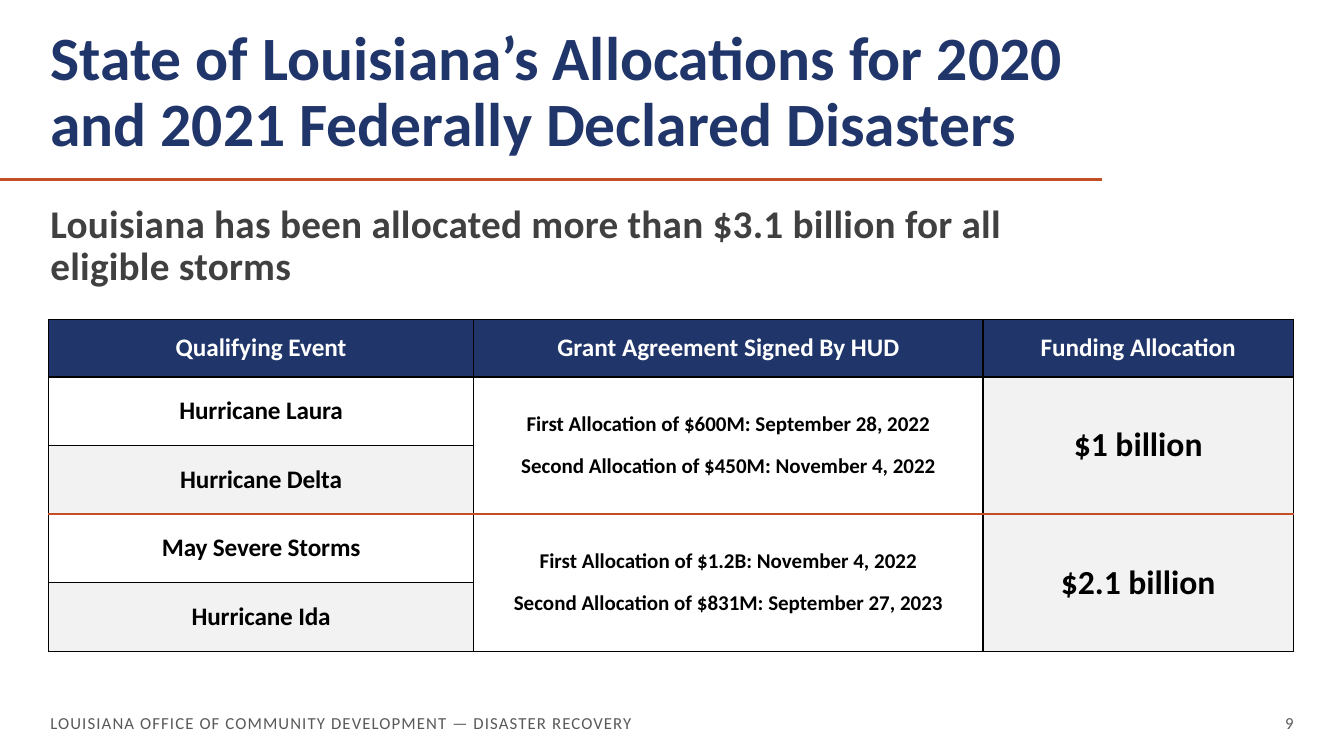
"""Build the slide on Louisiana's disaster funding allocations."""
import pptx
import pptx.dml.color
import pptx.enum.shapes
import pptx.enum.text
import pptx.oxml
import pptx.oxml.ns
import pptx.util

RGBColor = pptx.dml.color.RGBColor
Align = pptx.enum.text.PP_ALIGN
Anchor = pptx.enum.text.MSO_ANCHOR

NAVY = RGBColor(0x20, 0x35, 0x69)
RUST = RGBColor(0xC4, 0x4F, 0x27)
CHARCOAL = RGBColor(0x40, 0x40, 0x40)
GREY = RGBColor(0x59, 0x59, 0x59)
PALE = RGBColor(0xF2, 0xF2, 0xF2)
BLACK = RGBColor(0, 0, 0)
WHITE = RGBColor(0xFF, 0xFF, 0xFF)

HEADINGS = ["Qualifying Event", "Grant Agreement Signed By HUD", "Funding Allocation"]
GROUPS = [
    (
        ["Hurricane Laura", "Hurricane Delta"],
        [
            "First Allocation of $600M: September 28, 2022",
            "Second Allocation of $450M: November 4, 2022",
        ],
        "$1 billion",
    ),
    (
        ["May Severe Storms", "Hurricane Ida"],
        [
            "First Allocation of $1.2B: November 4, 2022",
            "Second Allocation of $831M: September 27, 2023",
        ],
        "$2.1 billion",
    ),
]


def px(length):
    """Turn px into EMU."""
    return pptx.util.Emu(length * 9144)


class Deck:
    """Hold the typeface and the current slide."""

    def __init__(self, width, height, typeface):
        """Open a presentation with one blank slide."""
        self.typeface = typeface
        self.presentation = pptx.Presentation()
        self.presentation.slide_width = px(width)
        self.presentation.slide_height = px(height)
        self.slide = self.presentation.slides.add_slide(self.presentation.slide_layouts[6])

    def paragraphs(self, frame, lines, size, color, bold=False, align=Align.LEFT,
                   spacing=None, gap=0, tracking=0):
        """Fill a text frame with one paragraph per line."""
        for index, line in enumerate(lines):
            paragraph = frame.paragraphs[0] if index == 0 else frame.add_paragraph()
            paragraph.text = line
            paragraph.alignment = align
            paragraph.line_spacing = spacing
            paragraph.space_before = pptx.util.Pt(gap if index else 0)
            font = paragraph.font
            font.name, font.size, font.bold = self.typeface, pptx.util.Pt(size), bold
            font.color.rgb = color
            if tracking:
                properties = paragraph._p.get_or_add_pPr().get_or_add_defRPr()
                properties.set("spc", str(round(tracking * 100)))

    def text(self, box, line, size, color, anchor=Anchor.MIDDLE, **style):
        """Add a text box without insets."""
        frame = self.slide.shapes.add_textbox(*map(px, box)).text_frame
        frame.word_wrap = True
        frame.vertical_anchor = anchor
        frame.margin_left = frame.margin_right = frame.margin_top = frame.margin_bottom = 0
        self.paragraphs(frame, [line], size, color, **style)

    def rule(self, left, right, y, color, width):
        """Add a horizontal line."""
        straight = pptx.enum.shapes.MSO_CONNECTOR.STRAIGHT
        line = self.slide.shapes.add_connector(straight, px(left), px(y), px(right), px(y))
        line.line.color.rgb = color
        line.line.width = pptx.util.Pt(width)
        effects = pptx.oxml.parse_xml(f"<a:effectLst {pptx.oxml.ns.nsdecls('a')}/>")
        line._element.spPr.append(effects)

    def table(self, left, top, columns, rows):
        """Add a table whose style has no header row or bands."""
        table = self.slide.shapes.add_table(
            len(rows), len(columns), px(left), px(top), px(sum(columns)), px(sum(rows))
        ).table
        table.first_row = table.horz_banding = False
        for column, width in zip(table.columns, columns):
            column.width = px(width)
        for row, height in zip(table.rows, rows):
            row.height = px(height)
        return table

    def border(self, cell, **accents):
        """Draw four borders, black unless a side has an accent colour."""
        for side in "LRTB":
            color = accents.get(side, BLACK)
            width = pptx.util.Pt(2.25 if side in accents else 1)
            cell._tc.get_or_add_tcPr().append(pptx.oxml.parse_xml(
                f'<a:ln{side} {pptx.oxml.ns.nsdecls("a")} w="{width}"><a:solidFill>'
                f'<a:srgbClr val="{color}"/></a:solidFill></a:ln{side}>'
            ))

    def cell(self, cell, lines, size, color=BLACK, fill=None, inset=5, **style):
        """Fill one table cell with centred bold text."""
        if fill is None:
            cell.fill.background()
        else:
            cell.fill.solid()
            cell.fill.fore_color.rgb = fill
        cell.vertical_anchor = Anchor.MIDDLE
        cell.margin_left = cell.margin_right = px(inset)
        cell.margin_top = cell.margin_bottom = px(inset)
        self.paragraphs(cell.text_frame, lines, size, color, bold=True,
                        align=Align.CENTER, **style)


def main():
    """Compose and save the slide."""
    deck = Deck(1333, 750, "Calibri")
    deck.rule(0, 1093, 178, RUST, 2.25)
    deck.text((50, 44, 1043, 115),
              "State of Louisiana’s Allocations for 2020 and 2021 Federally Declared Disasters",
              44, NAVY, anchor=Anchor.BOTTOM, bold=True, spacing=0.9)
    deck.text((50, 203, 1043, 44),
              "Louisiana has been allocated more than $3.1 billion for all eligible storms",
              28, CHARCOAL, anchor=Anchor.TOP, bold=True, spacing=0.9, tracking=0.2)
    deck.text((50, 700, 667, 35),
              "LOUISIANA OFFICE OF COMMUNITY DEVELOPMENT — DISASTER RECOVERY",
              12, GREY, tracking=0.8)
    deck.text((983, 700, 300, 35), "9", 12, GREY, align=Align.RIGHT)

    allocations = deck.table(48, 317, [422, 505, 308], [57] + [68] * 4)
    accents = {2: {"B": RUST}, 3: {"T": RUST}}
    for row in range(5):
        for column in range(3):
            deck.border(allocations.cell(row, column), **accents.get(row, {}))
    for column, heading in enumerate(HEADINGS):
        deck.cell(allocations.cell(0, column), [heading], 18, WHITE, NAVY, inset=0)
    for group, (events, agreements, funding) in enumerate(GROUPS):
        first = 1 + 2 * group
        for offset, (event, fill) in enumerate(zip(events, (None, PALE))):
            deck.cell(allocations.cell(first + offset, 0), [event], 18, fill=fill, tracking=-0.1)
        for column in (1, 2):
            allocations.cell(first, column).merge(allocations.cell(first + 1, column))
        deck.cell(allocations.cell(first, 1), agreements, 15, gap=11.8)
        deck.cell(allocations.cell(first, 2), [funding], 24, fill=PALE)

    deck.presentation.save("out.pptx")


if __name__ == "__main__":
    main()
